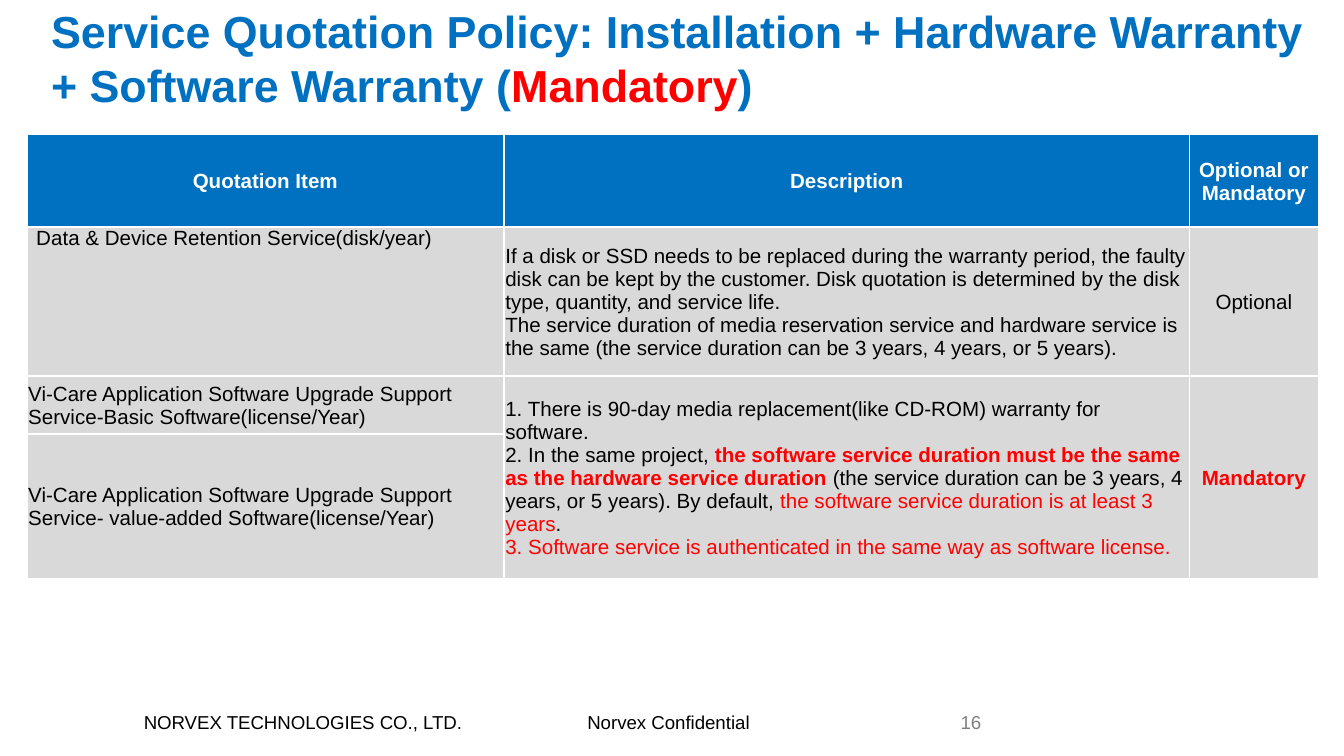
from lxml import etree
from pptx import Presentation
from pptx.dml.color import RGBColor
from pptx.enum.text import MSO_ANCHOR, MSO_AUTO_SIZE, PP_ALIGN
from pptx.oxml.ns import qn
from pptx.util import Inches, Pt

LEFT, CENTER, RIGHT = PP_ALIGN.LEFT, PP_ALIGN.CENTER, PP_ALIGN.RIGHT
TOP, MIDDLE = MSO_ANCHOR.TOP, MSO_ANCHOR.MIDDLE
NO_FIT = MSO_AUTO_SIZE.NONE

THEME = {
    "font": "Arial",
    "blue": "0070C0", "red": "FF0000", "black": "000000",
    "white": "FFFFFF", "panel": "D9D9D9", "grey": "808080",
    "title": 24, "table": 11, "footer": 10,
}


def write(frame, spans, size, color="black", bold=False, align=LEFT,
          anchor=TOP, insets=(0, 0, 0, 0)):
    """Fill a frame or cell; a span is text or (text, color, bold), "\n" breaks the line."""
    frame.margin_left, frame.margin_top, frame.margin_right, frame.margin_bottom = map(Inches, insets)
    frame.vertical_anchor = anchor
    para = getattr(frame, "text_frame", frame).paragraphs[0]
    para.alignment = align
    for span in [spans] if isinstance(spans, str) else spans:
        text, span_color, span_bold = (span, color, bold) if isinstance(span, str) else span
        for index, line in enumerate(text.split("\n")):
            if index:
                para.add_line_break()
            if not line:
                continue
            run = para.add_run()
            run.text = line
            run.font.name = THEME["font"]
            run.font.size = Pt(THEME[size])
            run.font.bold = span_bold
            run.font.color.rgb = RGBColor.from_string(THEME[span_color])


def draw_borders(cell):
    properties = cell._tc.get_or_add_tcPr()
    for side, points in (("L", 1), ("R", 1), ("T", 1), ("B", 1.5)):
        line = etree.SubElement(properties, qn(f"a:ln{side}"), w=str(Pt(points)))
        fill = etree.SubElement(line, qn("a:solidFill"))
        etree.SubElement(fill, qn("a:srgbClr"), val=THEME["white"])


deck = Presentation()
deck.slide_width = Inches(10)
deck.slide_height = deck.slide_width * 9 // 16
page = deck.slides.add_slide(deck.slide_layouts[5])

# Title
title = page.shapes.title
title.left, title.top, title.width, title.height = map(Inches, (0.28, -0.02, 9.65, 0.4))
title.text_frame.word_wrap = True
title.text_frame.auto_size = NO_FIT
write(title.text_frame,
      ["Service Quotation Policy: Installation + Hardware Warranty + Software Warranty (",
       ("Mandatory", "red", True), ")"],
      size="title", color="blue", bold=True, insets=(0.1, 0.05, 0.1, 0.05))

# Quotation table
COLUMNS = (3.55, 5.1, 0.96)
ROWS = (0.69, 1.11, 0.43, 1.08)
CONTENT = [
    ["Quotation Item", "Description", "Optional or Mandatory"],
    ["Data & Device Retention Service(disk/year)",
     "If a disk or SSD needs to be replaced during the warranty period, the faulty disk can be "
     "kept by the customer. Disk quotation is determined by the disk type, quantity, and service "
     "life. \nThe service duration of media reservation service and hardware service is the same "
     "(the service duration can be 3 years, 4 years, or 5 years).",
     "Optional"],
    ["Vi-Care Application Software Upgrade Support Service-Basic Software(license/Year)",
     ["1. There is 90-day media replacement(like CD-ROM) warranty for software.\n"
      "2. In the same project, ",
      ("the software service duration must be the same as the hardware service duration ",
       "red", True),
      "(the service duration can be 3 years, 4 years, or 5 years). By default, ",
      ("the software service duration is at least 3 years", "red", False),
      ".\n",
      ("3. Software service is authenticated in the same way as software license.",
       "red", False)],
     [("Mandatory", "red", True)]],
    ["Vi-Care Application Software Upgrade Support Service- value-added Software(license/Year)",
     "", ""],
]

table = page.shapes.add_table(len(ROWS), len(COLUMNS), Inches(0.2), Inches(1),
                              Inches(sum(COLUMNS)), Inches(sum(ROWS))).table
for column, width in zip(table.columns, COLUMNS):
    column.width = Inches(width)
for row, height in zip(table.rows, ROWS):
    row.height = Inches(height)
for column in (1, 2):
    table.cell(2, column).merge(table.cell(3, column))

for row, texts in enumerate(CONTENT):
    header = row == 0
    for column, text in enumerate(texts):
        cell = table.cell(row, column)
        draw_borders(cell)
        cell.fill.solid()
        cell.fill.fore_color.rgb = RGBColor.from_string(THEME["blue" if header else "panel"])
        if cell.is_spanned:
            continue
        retention = (row, column) == (1, 0)
        write(cell, text, size="table", color="white" if header else "black", bold=header,
              align=CENTER if header or column == 2 else LEFT,
              anchor=TOP if retention else MIDDLE,
              insets=(0.07, 0, 0.07, 0) if retention else (0.01, 0.01, 0.01, 0))

# Footer
FOOTERS = [
    ("NORVEX TECHNOLOGIES CO., LTD.", (1.07, 5.29, 2.47, 0.17), (0, 0, 0.09, 0), "black", LEFT),
    ("Norvex Confidential", (4.28, 5.29, 1.46, 0.17), (0.09, 0, 0.09, 0), "black", LEFT),
    ("16", (7.03, 5.24, 0.37, 0.27), (0.1, 0.05, 0.1, 0.05), "grey", RIGHT),
]
for text, place, insets, color, align in FOOTERS:
    box = page.shapes.add_textbox(*map(Inches, place))
    box.text_frame.word_wrap = False
    write(box.text_frame, text, size="footer", color=color, align=align, insets=insets)

deck.save("out.pptx")
